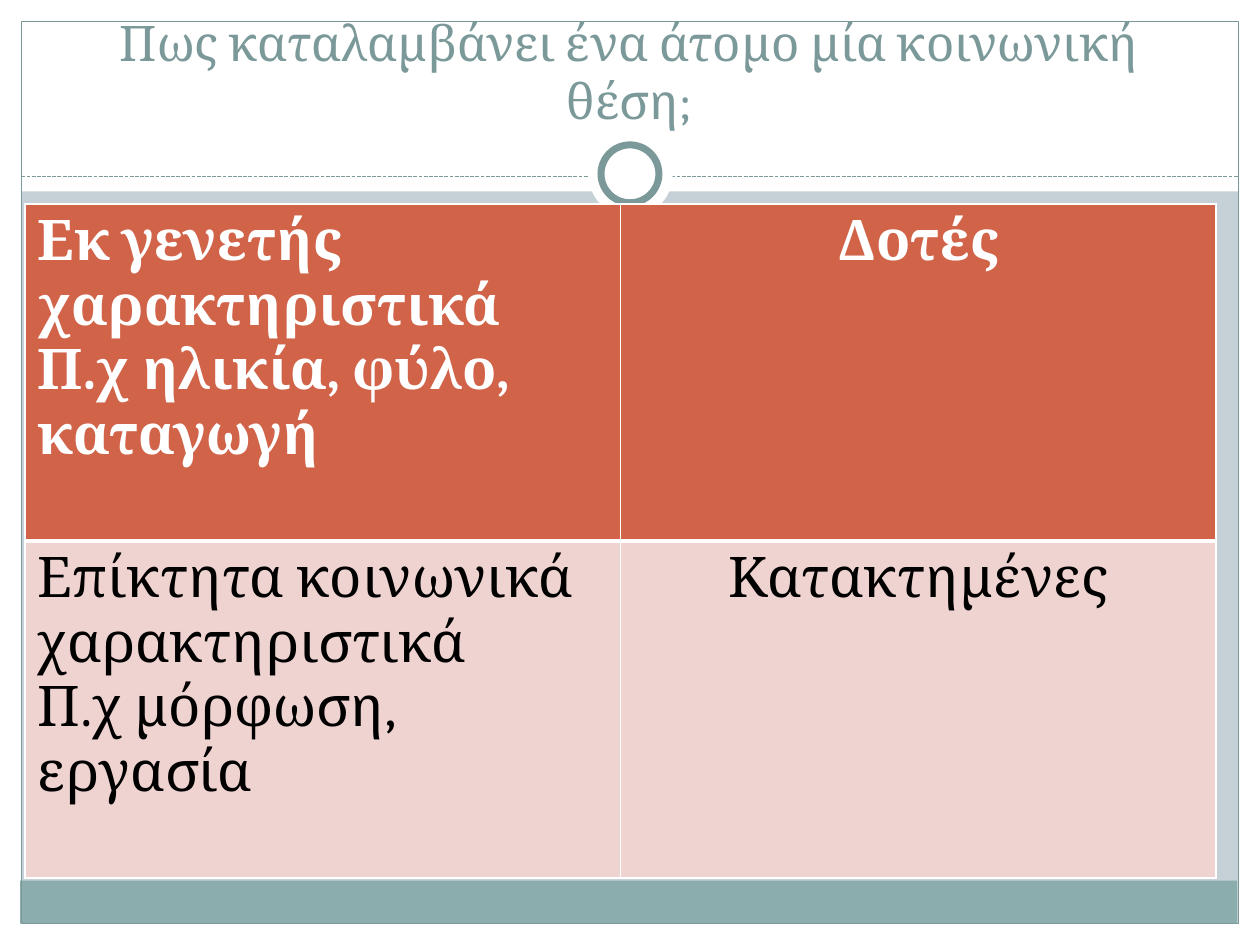
"""Build the slide on how a person takes up a social position."""
from lxml import etree
from pptx import Presentation
from pptx.dml.color import RGBColor
from pptx.enum import dml, shapes, text
from pptx.oxml import ns
from pptx.util import Inches, Pt

TITLE = "Πως καταλαμβάνει ένα άτομο μία κοινωνική θέση;"
ROWS = [
    ("Εκ γενετής χαρακτηριστικά\nΠ.χ ηλικία, φύλο, καταγωγή", "Δοτές"),
    ("Επίκτητα κοινωνικά χαρακτηριστικά\nΠ.χ μόρφωση, εργασία", "Κατακτημένες"),
]
THEME = {
    "font": "Cambria", "title": 28, "body": 32,
    "back": "C5D1D7", "white": "FFFFFF", "band": "8CADAE", "line": "7C999A",
    "head": "D16349", "cell": "EED3D0", "ink": "000000",
}
RECT, OVAL = shapes.MSO_SHAPE.RECTANGLE, shapes.MSO_SHAPE.OVAL
# kind, box, fill, line width
FRAME = [
    (RECT, (0, 7.33, 10, 0.17), "white", 0),
    (RECT, (0, 0, 10, 1.52), "white", 0),
    (RECT, (0, 0, 0.17, 7.5), "white", 0),
    (RECT, (9.83, 0, 0.17, 7.5), "white", 0),
    (RECT, (0.16, 6.99, 9.66, 0.34), "band", 0),
    (RECT, (0.17, 0.17, 9.66, 7.16), None, 0.75),
]
RING = [
    (OVAL, (4.67, 1.05, 0.67, 0.67), "white", 0),
    (OVAL, (4.77, 1.15, 0.46, 0.46), "white", 4),
]
RULE = (0.17, 1.4, 9.83, 1.4)
HEAD_BOX = (0.33, 0.25, 9.33, 0.83)
GRID_BOX = (0.2, 1.62, 9.45, 5.35)


def tint(name):
    return RGBColor.from_string(THEME[name])


def place(box):
    return [Inches(v) for v in box]


def paint(fill, name):
    fill.solid()
    fill.fore_color.rgb = tint(name)


def draw(slide, parts):
    for kind, box, fill, width in parts:
        shape = slide.shapes.add_shape(kind, *place(box))
        shape.shadow.inherit = False
        if fill:
            paint(shape.fill, fill)
        else:
            shape.fill.background()
        if width:
            shape.line.color.rgb = tint("line")
            shape.line.width = Pt(width)
        else:
            shape.line.fill.background()


def rule(slide):
    line = slide.shapes.add_connector(shapes.MSO_CONNECTOR.STRAIGHT, *place(RULE))
    line.line.color.rgb = tint("line")
    line.line.width = Pt(0.75)
    line.line.dash_style = dml.MSO_LINE.SQUARE_DOT
    prop = line._element.spPr
    etree.SubElement(prop, ns.qn("a:effectLst"))
    prop.find(".//" + ns.qn("a:prstDash")).set("val", "sysDash")


def write(frame, words, size, color, bold=False, center=False):
    frame.text = words
    frame.word_wrap = True
    for para in frame.paragraphs:
        para.alignment = text.PP_ALIGN.CENTER if center else text.PP_ALIGN.LEFT
        for run in para.runs:
            font = run.font
            font.name, font.size, font.bold = THEME["font"], Pt(THEME[size]), bold
            font.color.rgb = tint(color)


def edge(cell, widths):
    prop = cell._tc.get_or_add_tcPr()
    for spot, (side, width) in enumerate(widths.items()):
        line = etree.Element(ns.qn("a:ln" + side), w=str(Pt(width)))
        fill = etree.SubElement(line, ns.qn("a:solidFill"))
        etree.SubElement(fill, ns.qn("a:srgbClr"), val=THEME["white"])
        prop.insert(spot, line)


def title(slide):
    frame = slide.shapes.add_textbox(*place(HEAD_BOX)).text_frame
    write(frame, TITLE, "title", "line", center=True)
    frame.vertical_anchor = text.MSO_ANCHOR.BOTTOM


def grid(slide):
    table = slide.shapes.add_table(len(ROWS), len(ROWS[0]), *place(GRID_BOX)).table
    for r, row in enumerate(ROWS):
        top = r == 0
        for c, words in enumerate(row):
            cell = table.cell(r, c)
            paint(cell.fill, "head" if top else "cell")
            write(cell.text_frame, words, "body", "white" if top else "ink", top, c > 0)
            edge(cell, {"L": 1, "R": 1, "T": 1 if top else 3, "B": 3 if top else 1})


def main():
    deck = Presentation()
    deck.slide_width, deck.slide_height = Inches(10), Inches(7.5)
    slide = deck.slides.add_slide(deck.slide_layouts[6])
    paint(slide.background.fill, "back")
    draw(slide, FRAME)
    rule(slide)
    draw(slide, RING)
    title(slide)
    grid(slide)
    deck.save("out.pptx")


if __name__ == "__main__":
    main()
